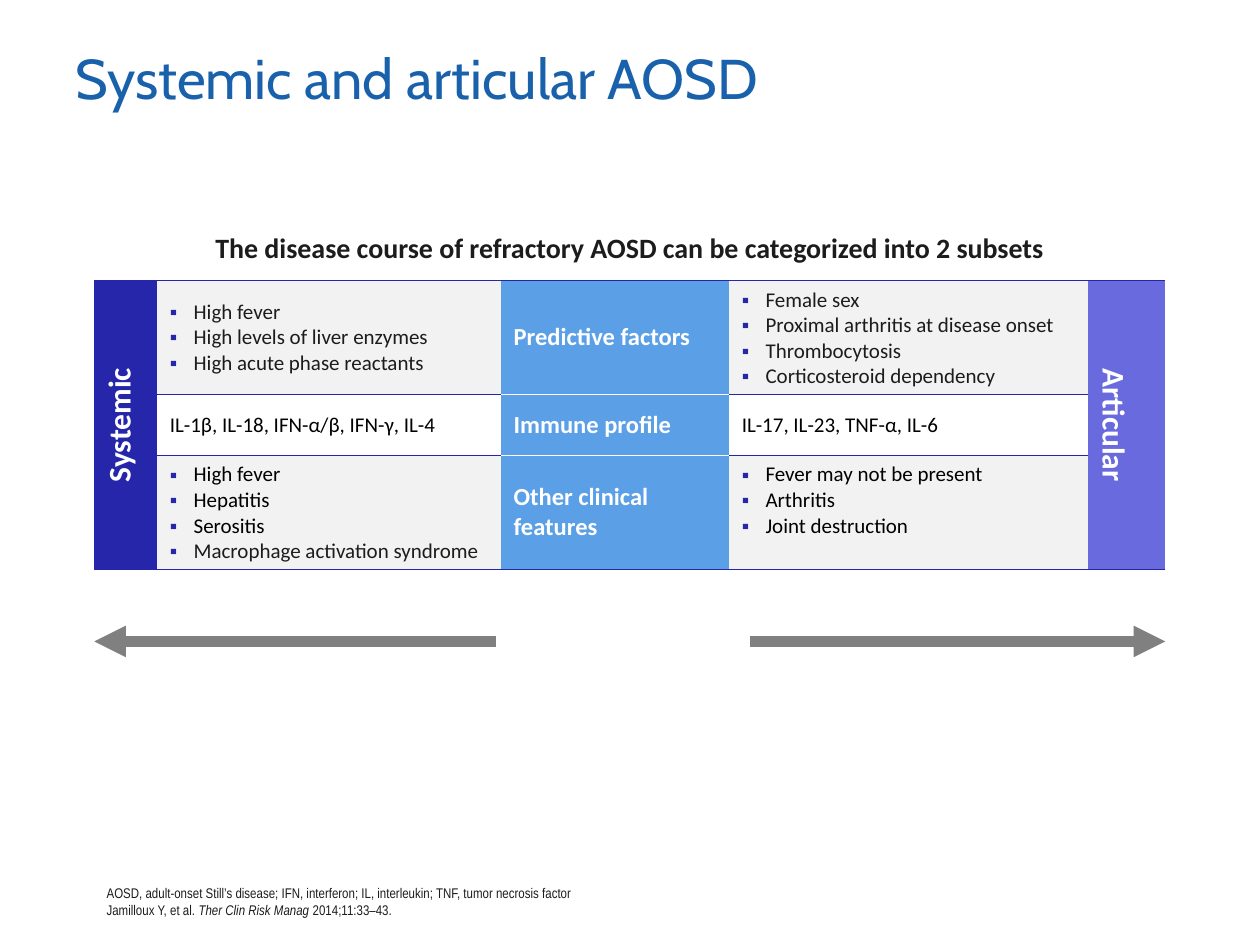
import pptx
import pptx.dml.color
import pptx.enum.shapes
import pptx.enum.text
import pptx.oxml.ns
import pptx.util
from lxml import etree

Cm = pptx.util.Cm
Pt = pptx.util.Pt
RGBColor = pptx.dml.color.RGBColor
ANCHOR = pptx.enum.text.MSO_ANCHOR
CENTER = pptx.enum.text.PP_ALIGN.CENTER
qn = pptx.oxml.ns.qn

TITLE_BLUE = RGBColor(0x19, 0x61, 0xAB)
INK = RGBColor(0x1C, 0x1C, 0x1C)
BLACK = RGBColor(0, 0, 0)
WHITE = RGBColor(0xFF, 0xFF, 0xFF)
NAVY = RGBColor(0x25, 0x26, 0xA9)
VIOLET = RGBColor(0x69, 0x6A, 0xDE)
SKY = RGBColor(0x5B, 0xA0, 0xE7)
PALE = RGBColor(0xF2, 0xF2, 0xF2)
GREY = RGBColor(0x80, 0x80, 0x80)


def fill_cell(cell, lines, fill, size, color, bold=False, bullets=False, anchor=ANCHOR.MIDDLE):
    cell.fill.solid()
    cell.fill.fore_color.rgb = fill
    cell.vertical_anchor = anchor
    cell.text_frame.text = "\n".join(lines)
    for paragraph in cell.text_frame.paragraphs:
        if bullets:
            properties = paragraph._p.get_or_add_pPr()
            properties.set("marL", str(Cm(0.48)))
            properties.set("indent", str(-Cm(0.48)))
            bullet_color = etree.SubElement(properties, qn("a:buClr"))
            etree.SubElement(bullet_color, qn("a:srgbClr"), val=str(NAVY))
            etree.SubElement(properties, qn("a:buFont"), typeface="Arial")
            etree.SubElement(properties, qn("a:buChar"), char="▪")
        for run in paragraph.runs:
            run.font.name = "Calibri"
            run.font.size = Pt(size)
            run.font.bold = bold
            run.font.color.rgb = color


def add_border(cell, side, color):
    border = etree.SubElement(cell._tc.get_or_add_tcPr(), qn(f"a:{side}"), w=str(Pt(0.5)))
    solid = etree.SubElement(border, qn("a:solidFill"))
    etree.SubElement(solid, qn("a:srgbClr"), val=str(color))


deck = pptx.Presentation()
deck.slide_width = Cm(25.4)
deck.slide_height = Cm(19.05)
slide = deck.slides.add_slide(deck.slide_layouts[6])

# Title
title = slide.shapes.add_textbox(Cm(1.27), Cm(0.76), Cm(22.86), Cm(3.18)).text_frame
title.word_wrap = True
title.text = "Systemic and articular AOSD"
title_font = title.paragraphs[0].runs[0].font
title_font.name = "Cabin"
title_font.size = Pt(32)
title_font.color.rgb = TITLE_BLUE

# Abbreviations and citation
footnote = slide.shapes.add_textbox(Cm(1.9), Cm(17.5), Cm(16.71), Cm(1.14)).text_frame
footnote.word_wrap = True
footnote.vertical_anchor = ANCHOR.BOTTOM
footnote.text = ("AOSD, adult-onset Still’s disease; IFN, interferon; IL, interleukin; "
                 "TNF, tumor necrosis factor\nJamilloux Y, et al. ")
citation = footnote.paragraphs[1]
for text, italic in (("Ther Clin Risk Manag ", True), ("2014;11:33–43.", False)):
    part = citation.add_run()
    part.text = text
    part.font.italic = italic
for paragraph in footnote.paragraphs:
    for run in paragraph.runs:
        run.font.name = "Arial Narrow"
        run.font.size = Pt(8)
        run.font.color.rgb = INK

# Table grid without a built-in style
subsets = slide.shapes.add_table(5, 5, Cm(1.9), Cm(4.39), Cm(21.59), Cm(7.78)).table
subsets.first_row = False
subsets.horz_banding = False
subsets._tbl.tblPr.find(qn("a:tableStyleId")).text = "{2D5ABB26-0587-4C30-8999-92F81FD0307C}"
for column, width in zip(subsets.columns, (1.27, 6.93, 4.6, 7.23, 1.56)):
    column.width = Cm(width)
for row, height in zip(subsets.rows, (1.27, 2.18, 1.24, 2.18, 0.89)):
    row.height = Cm(height)

# Rules between rows; the centre column is divided in white
for column in range(5):
    add_border(subsets.cell(0, column), "lnB", NAVY)
    add_border(subsets.cell(1, column), "lnT", NAVY)
for column, rule in ((1, NAVY), (2, WHITE), (3, NAVY)):
    for upper in (1, 2):
        add_border(subsets.cell(upper, column), "lnB", rule)
        add_border(subsets.cell(upper + 1, column), "lnT", rule)

# Heading row and empty closing row
heading = subsets.cell(0, 0)
heading.merge(subsets.cell(0, 4))
fill_cell(heading, ["The disease course of refractory AOSD can be categorized into 2 subsets"],
          WHITE, 16, INK, bold=True)
heading.margin_left = heading.margin_right = 0
heading.text_frame.paragraphs[0].alignment = CENTER
closing = subsets.cell(4, 0)
closing.merge(subsets.cell(4, 4))
closing.fill.solid()
closing.fill.fore_color.rgb = WHITE

# Rotated subset names at both sides
for column, name, fill, direction in ((0, "Systemic", NAVY, "vert270"),
                                      (4, "Articular", VIOLET, "vert")):
    side = subsets.cell(1, column)
    side.merge(subsets.cell(3, column))
    fill_cell(side, [name], fill, 18, WHITE, bold=True)
    side.text_frame.paragraphs[0].alignment = CENTER
    side._tc.get_or_add_tcPr().set("vert", direction)

# Comparison: systemic, topic, articular, text colour
comparison = [
    (["High fever", "High levels of liver enzymes", "High acute phase reactants"],
     "Predictive factors",
     ["Female sex", "Proximal arthritis at disease onset", "Thrombocytosis",
      "Corticosteroid dependency"], INK),
    (["IL-1β, IL-18, IFN-α/β, IFN-γ, IL-4"],
     "Immune profile",
     ["IL-17, IL-23, TNF-α, IL-6"], BLACK),
    (["High fever", "Hepatitis", "Serositis", "Macrophage activation syndrome"],
     "Other clinical features",
     ["Fever may not be present", "Arthritis", "Joint destruction"], BLACK),
]
for row, (systemic, topic, articular, color) in enumerate(comparison, start=1):
    listed = len(systemic) > 1
    fill = PALE if listed else WHITE
    fill_cell(subsets.cell(row, 1), systemic, fill, 12, color, bullets=listed)
    fill_cell(subsets.cell(row, 2), [topic], SKY, 14, WHITE, bold=True)
    fill_cell(subsets.cell(row, 3), articular, fill, 12, color, bullets=listed,
              anchor=ANCHOR.TOP if listed else ANCHOR.MIDDLE)
syndrome = subsets.cell(3, 1).text_frame.paragraphs[-1].runs[0]
syndrome.font.color.rgb = INK

# Arrows pointing outwards to each subset
for start, end in ((10, 1.9), (15.11, 23.49)):
    arrow = slide.shapes.add_connector(pptx.enum.shapes.MSO_CONNECTOR.STRAIGHT,
                                       Cm(start), Cm(12.93), Cm(end), Cm(12.93))
    arrow.line.color.rgb = GREY
    arrow.line.width = Pt(6)
    etree.SubElement(arrow.line._get_or_add_ln(), qn("a:tailEnd"), type="triangle")
    etree.SubElement(arrow._element.spPr, qn("a:effectLst"))

deck.save("out.pptx")
